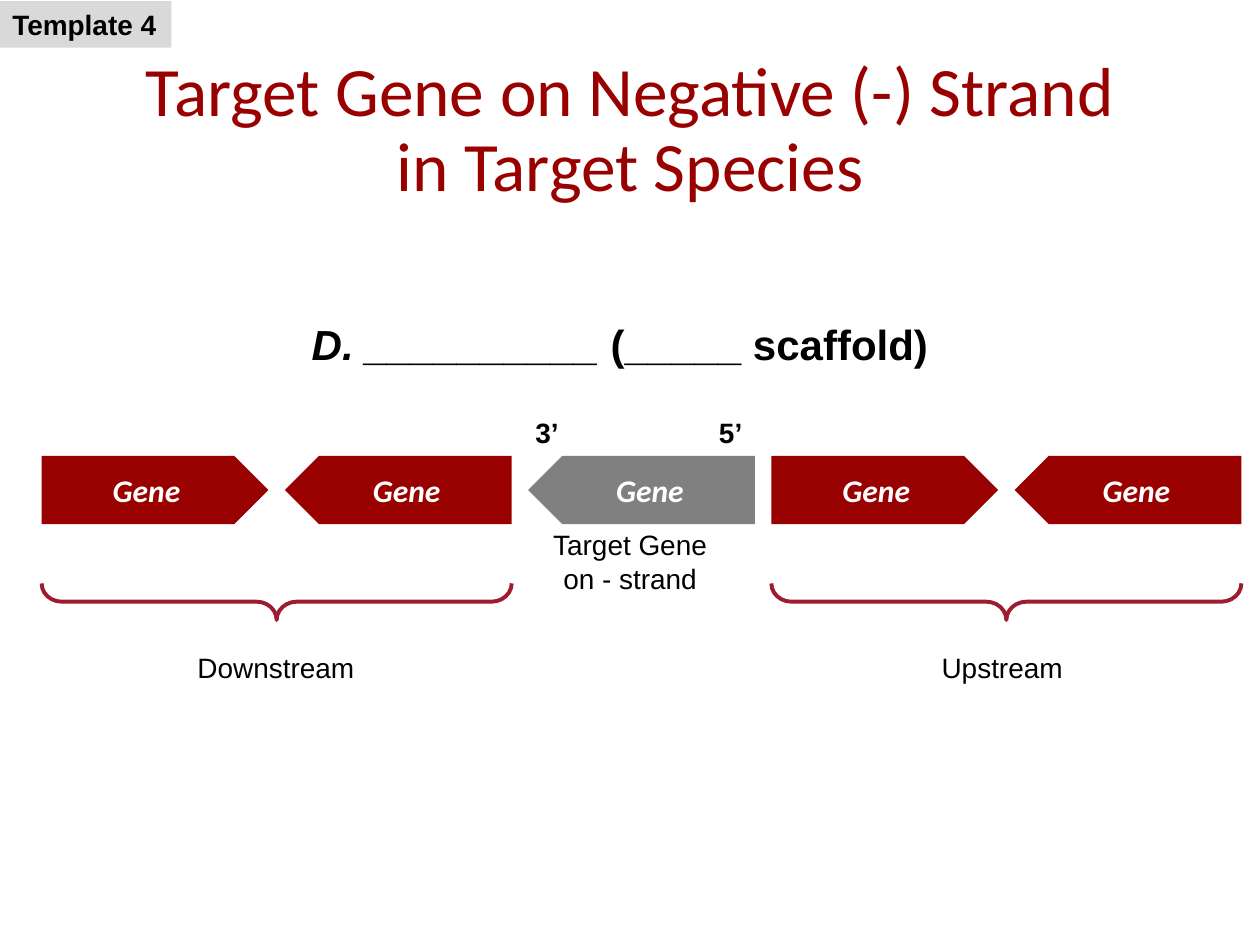
from lxml import etree
from pptx import Presentation
from pptx.dml.color import RGBColor
from pptx.enum.shapes import MSO_SHAPE
from pptx.enum.text import MSO_ANCHOR, PP_ALIGN
from pptx.oxml.ns import qn
from pptx.util import Pt

PENTAGON, BRACE, RECTANGLE = MSO_SHAPE.PENTAGON, MSO_SHAPE.LEFT_BRACE, MSO_SHAPE.RECTANGLE
LEFT, CENTER = PP_ALIGN.LEFT, PP_ALIGN.CENTER
MIDDLE = MSO_ANCHOR.MIDDLE

RED, GRAY, PALE, BRACE_RED = "990000", "808080", "D9D9D9", "9E1B32"
BLACK, WHITE = "000000", "FFFFFF"

GENE_LEFT, GENE_TOP, GENE_WIDTH, GENE_HEIGHT = 23.8, 260.6, 129.6, 38.9
GENE_PITCH = 139
BRACE_MIDDLE, BRACE_DEPTH = 343.8, 20.9
# Fill and whether the gene points left
GENES = [(RED, False), (RED, True), (GRAY, True), (RED, False), (RED, True)]


def rgb(color):
    return RGBColor.from_string(color)


def write(shape, text, size, color=BLACK, font="Arial", bold=False, italic=False, align=CENTER):
    frame = shape.text_frame
    frame.text = text
    for paragraph in frame.paragraphs:
        paragraph.alignment = align
        for run in paragraph.runs:
            run.font.name = font
            run.font.size = Pt(size)
            run.font.bold = bold
            run.font.italic = italic
            run.font.color.rgb = rgb(color)


def add_label(slide, box, text, size=16, wrap=False, **style):
    label = slide.shapes.add_textbox(*map(Pt, box))
    label.text_frame.word_wrap = wrap
    write(label, text, size, **style)
    return label


def add_filled(slide, preset, box, fill):
    shape = slide.shapes.add_shape(preset, *map(Pt, box))
    shape.shadow.inherit = False
    shape.fill.solid()
    shape.fill.fore_color.rgb = rgb(fill)
    shape.line.fill.background()
    return shape


def add_gene(slide, index, fill, points_left):
    box = (GENE_LEFT + index * GENE_PITCH, GENE_TOP, GENE_WIDTH, GENE_HEIGHT)
    gene = add_filled(slide, PENTAGON, box, fill)
    if points_left:
        gene._element.spPr.find(qn("a:xfrm")).set("flipH", "1")
    gene.text_frame.vertical_anchor = MIDDLE
    write(gene, "Gene", 18, WHITE, "Calibri", bold=True, italic=True)


def add_brace(slide, first_gene):
    """Bracket two neighbouring genes from below."""
    span = GENE_PITCH + GENE_WIDTH
    center = GENE_LEFT + first_gene * GENE_PITCH + span / 2
    box = (center - BRACE_DEPTH / 2, BRACE_MIDDLE - span / 2, BRACE_DEPTH, span)
    brace = slide.shapes.add_shape(BRACE, *map(Pt, box))
    brace.rotation = 270
    brace.adjustments[0] = 0.55
    brace.shadow.inherit = False
    brace.fill.background()
    brace.line.color.rgb = rgb(BRACE_RED)
    brace.line.width = Pt(2.25)


def add_tab_stop(paragraph, position):
    tabs = etree.SubElement(paragraph._p.get_or_add_pPr(), qn("a:tabLst"))
    etree.SubElement(tabs, qn("a:tab"), pos=str(Pt(position)), algn="l")


def main():
    presentation = Presentation()
    presentation.slide_width, presentation.slide_height = Pt(720), Pt(540)
    slide = presentation.slides.add_slide(presentation.slide_layouts[6])

    for index, (fill, points_left) in enumerate(GENES):
        add_gene(slide, index, fill, points_left)
    for first_gene in (0, 3):
        add_brace(slide, first_gene)

    add_label(slide, (308.2, 298, 103.7, 46), "Target Gene\non - strand")
    add_label(slide, (105.1, 368, 105.1, 26.6), "Downstream")
    add_label(slide, (530.6, 368, 84.2, 26.6), "Upstream")

    strand_ends = add_label(slide, (298.8, 234, 136, 26.6), "3’\t5’",
                            wrap=True, bold=True, align=LEFT)
    add_tab_stop(strand_ends.text_frame.paragraphs[0], 105)

    species = add_label(slide, (0, 178.6, 708.5, 36), "D. __________ ",
                        24, wrap=True, bold=True, italic=True)
    scaffold = species.text_frame.paragraphs[0].add_run()
    scaffold.text = "(_____ scaffold)"
    scaffold.font.name = "Arial"
    scaffold.font.size = Pt(24)
    scaffold.font.bold = True
    scaffold.font.color.rgb = rgb(BLACK)

    title = add_label(slide, (49.7, 28.8, 620.6, 61.2),
                      "Target Gene on Negative (-) Strand\vin Target Species",
                      39.6, wrap=True, color=RED, font="Calibri")
    title.text_frame.paragraphs[0].line_spacing = 0.9

    tag = add_filled(slide, RECTANGLE, (0, 0.7, 98, 26.6), PALE)
    tag.text_frame.word_wrap = False
    write(tag, "Template 4", 16, bold=True, align=LEFT)

    presentation.save("out.pptx")


if __name__ == "__main__":
    main()
